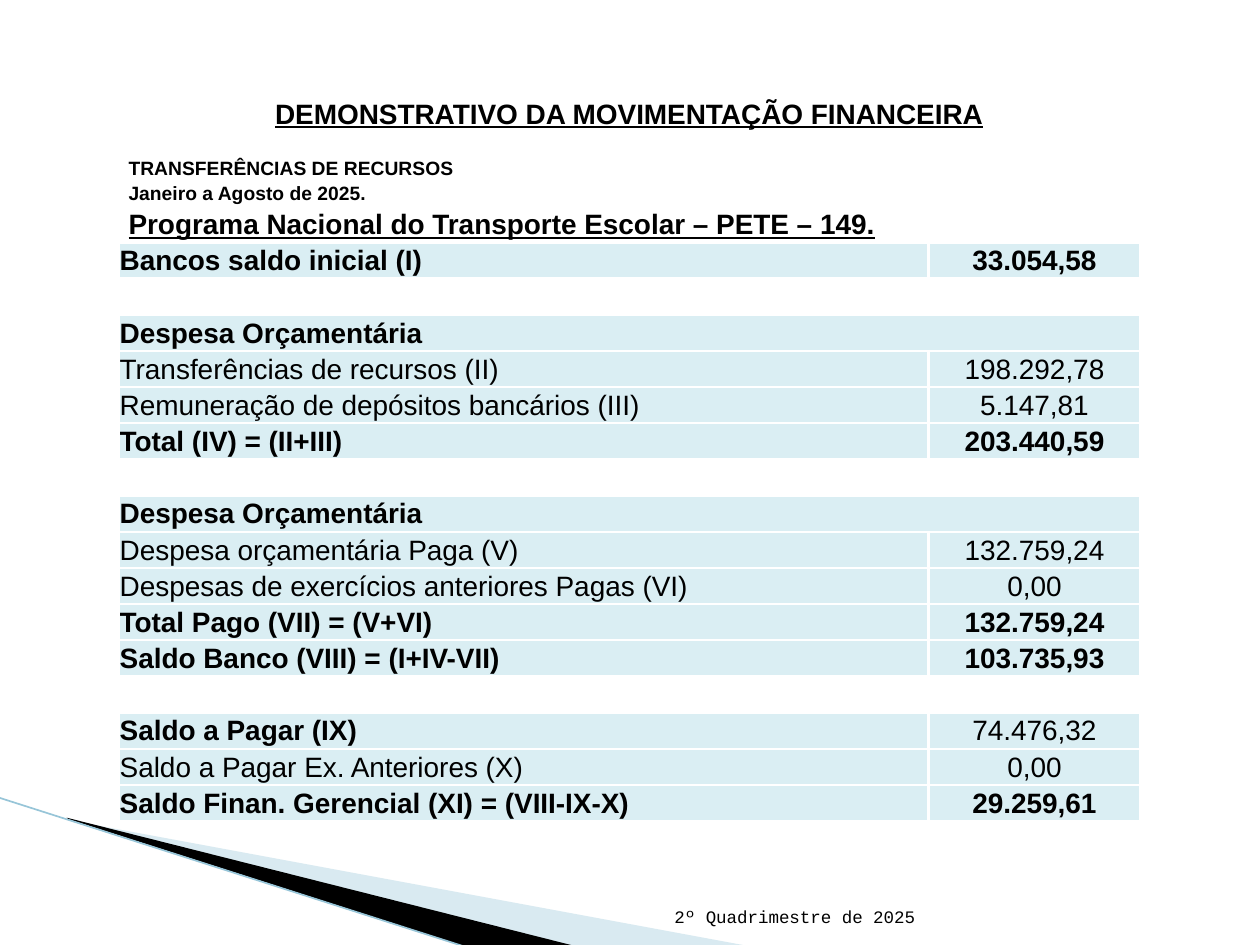
from dataclasses import dataclass

from lxml import etree
from pptx import Presentation
from pptx.dml.color import RGBColor
from pptx.enum.shapes import MSO_CONNECTOR
from pptx.enum.text import MSO_ANCHOR, PP_ALIGN
from pptx.oxml.ns import qn
from pptx.slide import Slide
from pptx.util import Inches, Pt

LEFT, CENTER, RIGHT, JUSTIFY = PP_ALIGN.LEFT, PP_ALIGN.CENTER, PP_ALIGN.RIGHT, PP_ALIGN.JUSTIFY
MIDDLE, BOTTOM = MSO_ANCHOR.MIDDLE, MSO_ANCHOR.BOTTOM
STRAIGHT = MSO_CONNECTOR.STRAIGHT

COLUMNS, ROWS = 100, 75
COLORS = {"white": "FFFFFF", "black": "000000", "band": "DAEEF3", "wedge": "A0CBDC", "edge": "97C5D8"}

HEADINGS = [
    ("DEMONSTRATIVO DA MOVIMENTAÇÃO FINANCEIRA", dict(align=CENTER, underline=True)),
    ("", {}),
    ("TRANSFERÊNCIAS DE RECURSOS", dict(size=11, inset=0.08)),
    ("Janeiro a Agosto de 2025.", dict(size=11, inset=0.08)),
    ("Programa Nacional do Transporte Escolar – PETE – 149.", dict(underline=True, inset=0.08)),
]
ENTRIES = [
    ("Bancos saldo inicial (I)", "33.054,58", True, True),
    None,
    ("Despesa Orçamentária", None, True, True),
    ("Transferências de recursos (II)", "198.292,78", False, False),
    ("Remuneração de depósitos bancários (III)", "5.147,81", False, False),
    ("Total (IV) = (II+III)", "203.440,59", True, True),
    None,
    ("Despesa Orçamentária", None, True, True),
    ("Despesa orçamentária Paga (V)", "132.759,24", False, False),
    ("Despesas de exercícios anteriores Pagas (VI)", "0,00", False, False),
    ("Total Pago (VII) = (V+VI)", "132.759,24", True, True),
    ("Saldo Banco (VIII) = (I+IV-VII)", "103.735,93", True, True),
    None,
    ("Saldo a Pagar (IX)", "74.476,32", True, False),
    ("Saldo a Pagar Ex. Anteriores (X)", "0,00", False, False),
    ("Saldo Finan. Gerencial (XI) = (VIII-IX-X)", "29.259,61", True, True),
]


def write_text(paragraph, text, size=16, font="Arial", bold=False, underline=False, align=LEFT):
    paragraph.alignment = align
    run = paragraph.add_run()
    run.text = text
    run.font.size = Pt(size)
    run.font.name = font
    run.font.bold = bold
    run.font.underline = underline
    run.font.color.rgb = RGBColor.from_string(COLORS["black"])


@dataclass
class SlideBuilder:
    """Draws styled elements on a slide, placed in grid columns and rows."""

    presentation: Presentation
    slide: Slide

    def x(self, columns):
        return int(self.presentation.slide_width * columns / COLUMNS)

    def y(self, rows):
        return int(self.presentation.slide_height * rows / ROWS)

    def polygon(self, points, color, opacity=100):
        corners = [(self.x(column), self.y(row)) for column, row in points]
        builder = self.slide.shapes.build_freeform(*corners[0])
        builder.add_line_segments(corners[1:], close=True)
        shape = builder.convert_to_shape()
        shape.shadow.inherit = False
        shape.line.fill.background()
        shape.fill.solid()
        shape.fill.fore_color.rgb = RGBColor.from_string(COLORS[color])
        if opacity < 100:
            tone = shape.fill._xPr.find(qn("a:solidFill"))[0]
            etree.SubElement(tone, qn("a:alpha"), val=str(opacity * 1000))

    def line(self, start, end, color, width):
        connector = self.slide.shapes.add_connector(
            STRAIGHT, self.x(start[0]), self.y(start[1]), self.x(end[0]), self.y(end[1]))
        connector.line.color.rgb = RGBColor.from_string(COLORS[color])
        connector.line.width = Pt(width)
        etree.SubElement(connector._element.spPr, qn("a:effectLst"))

    def text(self, text, column, row, width, height, **style):
        box = self.slide.shapes.add_textbox(self.x(column), self.y(row), self.x(width), self.y(height))
        frame = box.text_frame
        frame.word_wrap = True
        frame.vertical_anchor = BOTTOM
        write_text(frame.paragraphs[0], text, **style)

    def table(self, column, row, widths, heights):
        frame = self.slide.shapes.add_table(
            len(heights), len(widths), self.x(column), self.y(row),
            self.x(sum(widths)), self.y(sum(heights)))
        table = frame.table
        table.first_row = table.horz_banding = False
        for table_column, width in zip(table.columns, widths):
            table_column.width = self.x(width)
        for table_row, height in zip(table.rows, heights):
            table_row.height = self.y(height)
        return table

    def borders(self, cell, sides):
        for side in sides:
            border = etree.SubElement(cell._tc.get_or_add_tcPr(), qn(f"a:ln{side}"), w=str(Pt(1.5)))
            fill = etree.SubElement(border, qn("a:solidFill"))
            etree.SubElement(fill, qn("a:srgbClr"), val=COLORS["white"])

    def cell(self, cell, text="", fill="white", sides="LRTB", inset=0.01, **style):
        self.borders(cell, sides)
        cell.fill.solid()
        cell.fill.fore_color.rgb = RGBColor.from_string(COLORS[fill])
        cell.vertical_anchor = MIDDLE
        cell.margin_left = Inches(inset)
        cell.margin_right = cell.margin_top = Inches(0.01)
        cell.margin_bottom = 0
        paragraph = cell.text_frame.paragraphs[0]
        if text:
            write_text(paragraph, text, **style)
        else:
            etree.SubElement(paragraph._p, qn("a:endParaRPr"), sz="1000")


def fill_statement(builder, table):
    for index, (text, style) in enumerate(HEADINGS):
        left, right = table.cell(index, 0), table.cell(index, 1)
        left.merge(right)
        sides = "B" if index == len(HEADINGS) - 1 else ""
        builder.cell(left, text, sides=sides, bold=True, **style)
        builder.borders(right, sides)
    for index, entry in enumerate(ENTRIES, start=len(HEADINGS)):
        left, right = table.cell(index, 0), table.cell(index, 1)
        if entry is None:
            builder.cell(left)
            builder.cell(right)
            continue
        label, amount, label_bold, amount_bold = entry
        if amount is None:
            left.merge(right)
        builder.cell(left, label, "band", bold=label_bold, align=JUSTIFY if amount else LEFT)
        builder.cell(right, amount, "band", bold=amount_bold, align=CENTER)


def main():
    presentation = Presentation()
    presentation.slide_width, presentation.slide_height = Inches(10), Inches(7.5)
    slide = presentation.slides.add_slide(presentation.slide_layouts[6])
    builder = SlideBuilder(presentation, slide)

    builder.polygon([(5.5, 65.1), (59.5, 75.1), (45.6, 75.1), (5.5, 65)], "wedge", opacity=40)
    builder.polygon([(5.3, 64.9), (45.7, 75.1), (37.2, 75.2), (5.4, 65)], "black")
    builder.line((-0.1, 63.3), (37.1, 75.2), "edge", 0.95)
    builder.text("2º Quadrimestre de 2025", 47.9, 70.1, 25.7, 4,
                 size=10, font="Courier New", align=RIGHT)

    short_rows = [1.9, 2, 2]
    line_count = len(HEADINGS) + len(ENTRIES) - len(short_rows)
    line_height = (57.6 - sum(short_rows)) / line_count
    heights = [line_height] + short_rows + [line_height] * (line_count - 1)
    fill_statement(builder, builder.table(9.4, 7.6, [64.3, 16.8], heights))

    presentation.save("out.pptx")


if __name__ == "__main__":
    main()
